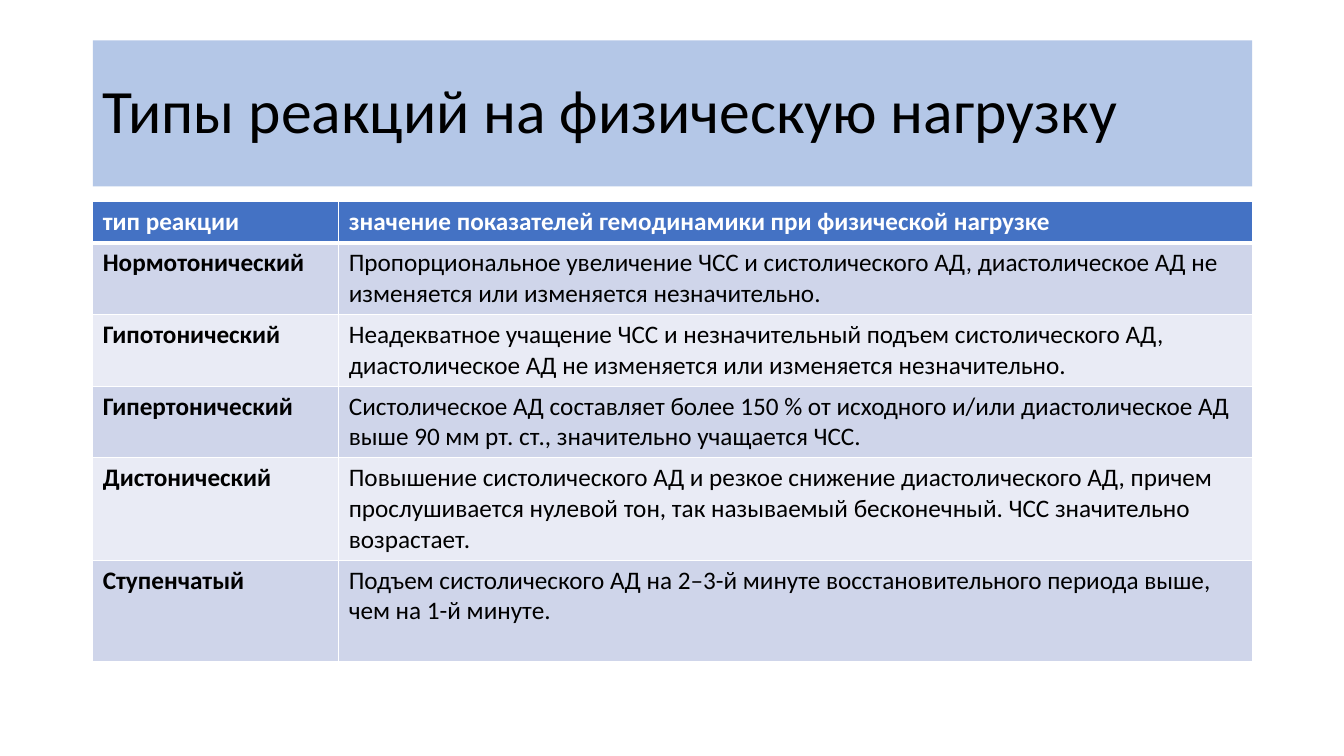
from dataclasses import dataclass

from pptx import Presentation
from pptx.dml.color import RGBColor
from pptx.enum.text import MSO_ANCHOR, MSO_AUTO_SIZE, PP_ALIGN
from pptx.oxml import parse_xml
from pptx.oxml.ns import nsdecls
from pptx.util import Inches, Pt


@dataclass(frozen=True)
class Theme:
    """Fonts, type sizes, colours and line widths of the slide."""
    font: str = "Calibri"
    title_size: int = 44
    table_size: int = 18
    dark: str = "000000"
    light: str = "FFFFFF"
    title_fill: str = "B4C7E7"
    header_fill: str = "4472C4"
    bands: tuple = ("CFD5EA", "E9EBF5")
    thin_line: int = 1
    header_line: int = 3


THEME = Theme()
SLIDE_SIZE = (13.33, 7.5)
TITLE_BOX = (0.92, 0.4, 11.5, 1.45)
TABLE_BOX = (0.92, 2, 11.5, 4.56)
TYPE_COLUMN_WIDTH = 2.44
LINE_HEIGHT, ROW_PADDING = 0.3, 0.11

TITLE = "Типы реакций на физическую нагрузку"
HEADER = ("тип реакции", "значение показателей гемодинамики при физической нагрузке", 1)
REACTIONS = [
    ("Нормотонический",
     "Пропорциональное увеличение ЧСС и систолического АД, диастолическое АД не "
     "изменяется или изменяется незначительно.", 2),
    ("Гипотонический",
     "Неадекватное учащение ЧСС и незначительный подъем систолического АД, "
     "диастолическое АД не изменяется или изменяется незначительно.", 2),
    ("Гипертонический",
     "Систолическое АД составляет более 150 % от исходного и/или диастолическое АД "
     "выше 90 мм рт. ст., значительно учащается ЧСС.", 2),
    ("Дистонический",
     "Повышение систолического АД и резкое снижение диастолического АД, причем "
     "прослушивается нулевой тон, так называемый бесконечный. ЧСС значительно "
     "возрастает.", 3),
    ("Ступенчатый",
     "Подъем систолического АД на 2–3-й минуте восстановительного периода выше, "
     "чем на 1-й минуте.", 3),
]


def write_text(frame, text, size, color=THEME.dark, bold=False, spacing=1.0):
    """Write one left-aligned paragraph into a text frame."""
    paragraph = frame.paragraphs[0]
    paragraph.alignment = PP_ALIGN.LEFT
    paragraph.line_spacing = spacing
    run = paragraph.add_run()
    run.text = text
    run.font.name = THEME.font
    run.font.size = Pt(size)
    run.font.bold = bold
    run.font.color.rgb = RGBColor.from_string(color)


def fill_solid(target, color):
    """Give a shape or cell a solid fill."""
    target.fill.solid()
    target.fill.fore_color.rgb = RGBColor.from_string(color)


def set_borders(cell, **widths):
    """Draw cell borders, with widths in points keyed by side: L, R, T, B."""
    properties = cell._tc.get_or_add_tcPr()
    for position, (side, width) in enumerate(widths.items()):
        properties.insert(position, parse_xml(
            f'<a:ln{side} {nsdecls("a")} w="{Pt(width)}"><a:solidFill>'
            f'<a:srgbClr val="{THEME.light}"/></a:solidFill></a:ln{side}>'))


def add_title(slide, box):
    """Place the title placeholder as a filled band."""
    title = slide.shapes.title
    title.left, title.top, title.width, title.height = map(Inches, box)
    fill_solid(title, THEME.title_fill)
    frame = title.text_frame
    frame.auto_size = MSO_AUTO_SIZE.NONE
    frame.vertical_anchor = MSO_ANCHOR.MIDDLE
    write_text(frame, TITLE, THEME.title_size, spacing=0.9)


def add_reaction_table(slide, box):
    """Place the two-column table, each row as tall as its lines of text."""
    rows = [HEADER, *REACTIONS]
    table = slide.shapes.add_table(len(rows), 2, *map(Inches, box)).table
    table.columns[0].width = Inches(TYPE_COLUMN_WIDTH)
    table.columns[1].width = Inches(box[2] - TYPE_COLUMN_WIDTH)
    for row_index, (*texts, lines) in enumerate(rows):
        is_header = row_index == 0
        table.rows[row_index].height = Inches(ROW_PADDING + LINE_HEIGHT * lines)
        fill = THEME.header_fill if is_header else THEME.bands[(row_index - 1) % 2]
        top = THEME.header_line if row_index == 1 else THEME.thin_line
        bottom = THEME.header_line if is_header else THEME.thin_line
        for column_index, text in enumerate(texts):
            cell = table.cell(row_index, column_index)
            fill_solid(cell, fill)
            set_borders(cell, L=THEME.thin_line, R=THEME.thin_line, T=top, B=bottom)
            write_text(cell.text_frame, text, THEME.table_size,
                       color=THEME.light if is_header else THEME.dark,
                       bold=is_header or column_index == 0)


def main():
    """Build and save the presentation."""
    presentation = Presentation()
    presentation.slide_width, presentation.slide_height = map(Inches, SLIDE_SIZE)
    slide = presentation.slides.add_slide(presentation.slide_layouts.get_by_name("Title Only"))
    add_title(slide, TITLE_BOX)
    add_reaction_table(slide, TABLE_BOX)
    presentation.save("out.pptx")


if __name__ == "__main__":
    main()
